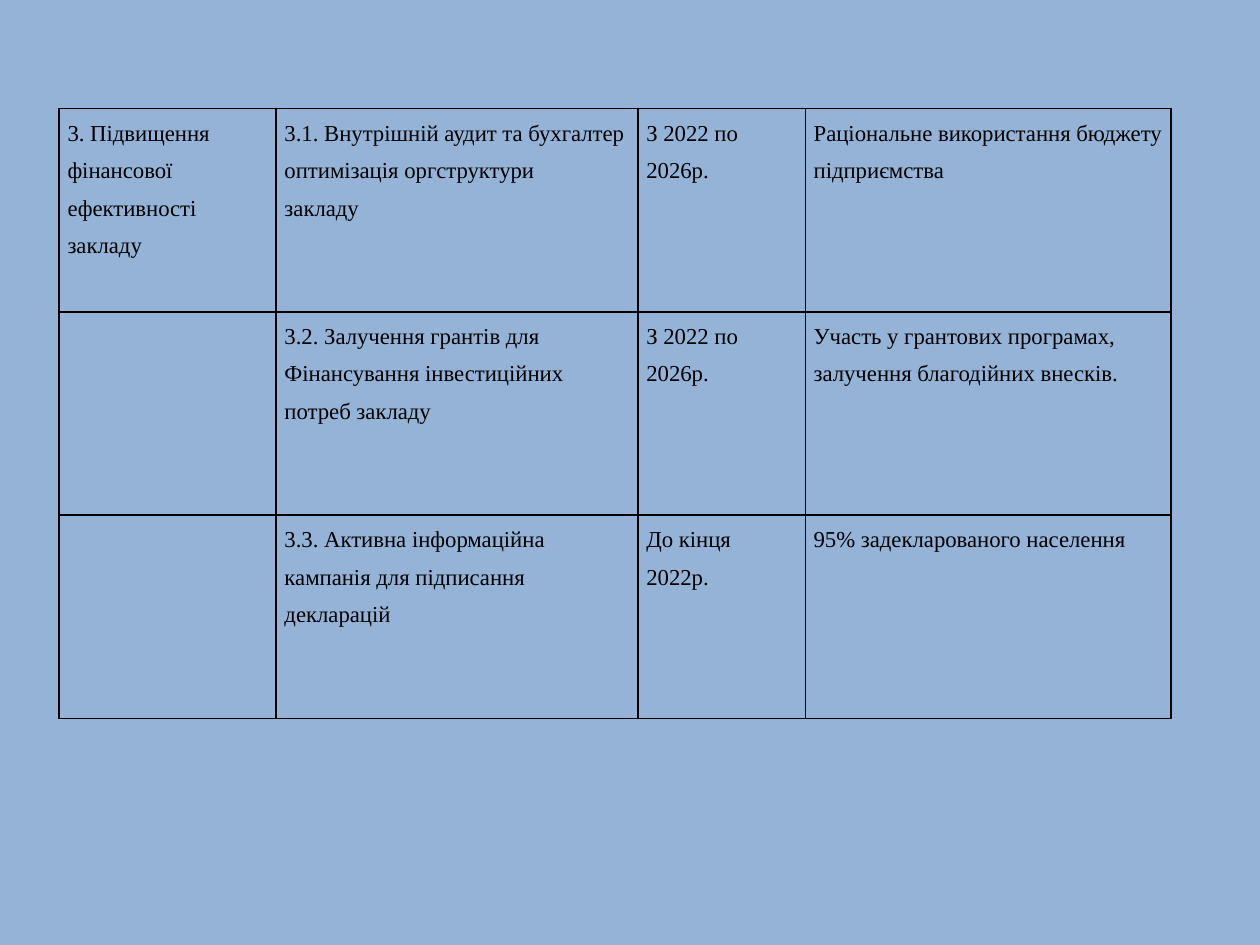
from lxml import etree
from pptx import Presentation
from pptx.dml.color import RGBColor
from pptx.oxml.ns import qn
from pptx.util import Pt

FONT = "Times New Roman"
BACKGROUND = "95B3D7"
BLACK = "000000"
SIDE_INSET = 4.8
COLUMN_WIDTHS = [124, 206.8, 95.6, 209]
ROW_HEIGHT = 116.2

# Each cell is a list of paragraphs
GOALS = [
    [["3. Підвищення фінансової", "ефективності закладу"],
     ["3.1. Внутрішній аудит та бухгалтер", "оптимізація оргструктури", "закладу"],
     ["З 2022 по 2026р."],
     ["Раціональне використання бюджету підприємства"]],
    [[],
     ["3.2. Залучення грантів для", "Фінансування інвестиційних", "потреб закладу"],
     ["З 2022 по 2026р."],
     ["Участь у грантових програмах, залучення благодійних внесків."]],
    [[],
     ["3.3. Активна інформаційна", "кампанія для підписання", "декларацій"],
     ["До кінця 2022р."],
     ["95% задекларованого населення"]],
]


def write_paragraph(para, text, size=13, color=BLACK, spacing=1.5):
    para.line_spacing = spacing
    span = para.add_run()
    span.text = text
    span.font.name = FONT
    span.font.size = Pt(size)
    span.font.color.rgb = RGBColor.from_string(color)


def add_borders(cell, color=BLACK, width=1):
    properties = cell._tc.get_or_add_tcPr()
    for side in ("a:lnL", "a:lnR", "a:lnT", "a:lnB"):
        line = etree.SubElement(properties, qn(side), w=str(Pt(width)))
        fill = etree.SubElement(line, qn("a:solidFill"))
        etree.SubElement(fill, qn("a:srgbClr"), val=color)


deck = Presentation()
deck.slide_width = Pt(720)
deck.slide_height = Pt(540)
page = deck.slides.add_slide(deck.slide_layouts[6])
page.background.fill.solid()
page.background.fill.fore_color.rgb = RGBColor.from_string(BACKGROUND)

frame = page.shapes.add_table(
    len(GOALS), len(COLUMN_WIDTHS), Pt(33.8), Pt(62),
    Pt(sum(COLUMN_WIDTHS)), Pt(ROW_HEIGHT * len(GOALS)))
table = frame.table
table.first_row = False
table.horz_banding = False
for column, width in zip(table.columns, COLUMN_WIDTHS):
    column.width = Pt(width)

for row, goal in zip(table.rows, GOALS):
    row.height = Pt(ROW_HEIGHT)
    for cell, lines in zip(row.cells, goal):
        cell.margin_left = cell.margin_right = Pt(SIDE_INSET)
        cell.margin_top = cell.margin_bottom = Pt(0)
        add_borders(cell)
        cell.fill.background()
        for index, text in enumerate(lines):
            paragraphs = cell.text_frame
            para = paragraphs.add_paragraph() if index else paragraphs.paragraphs[0]
            write_paragraph(para, text)

deck.save("out.pptx")
